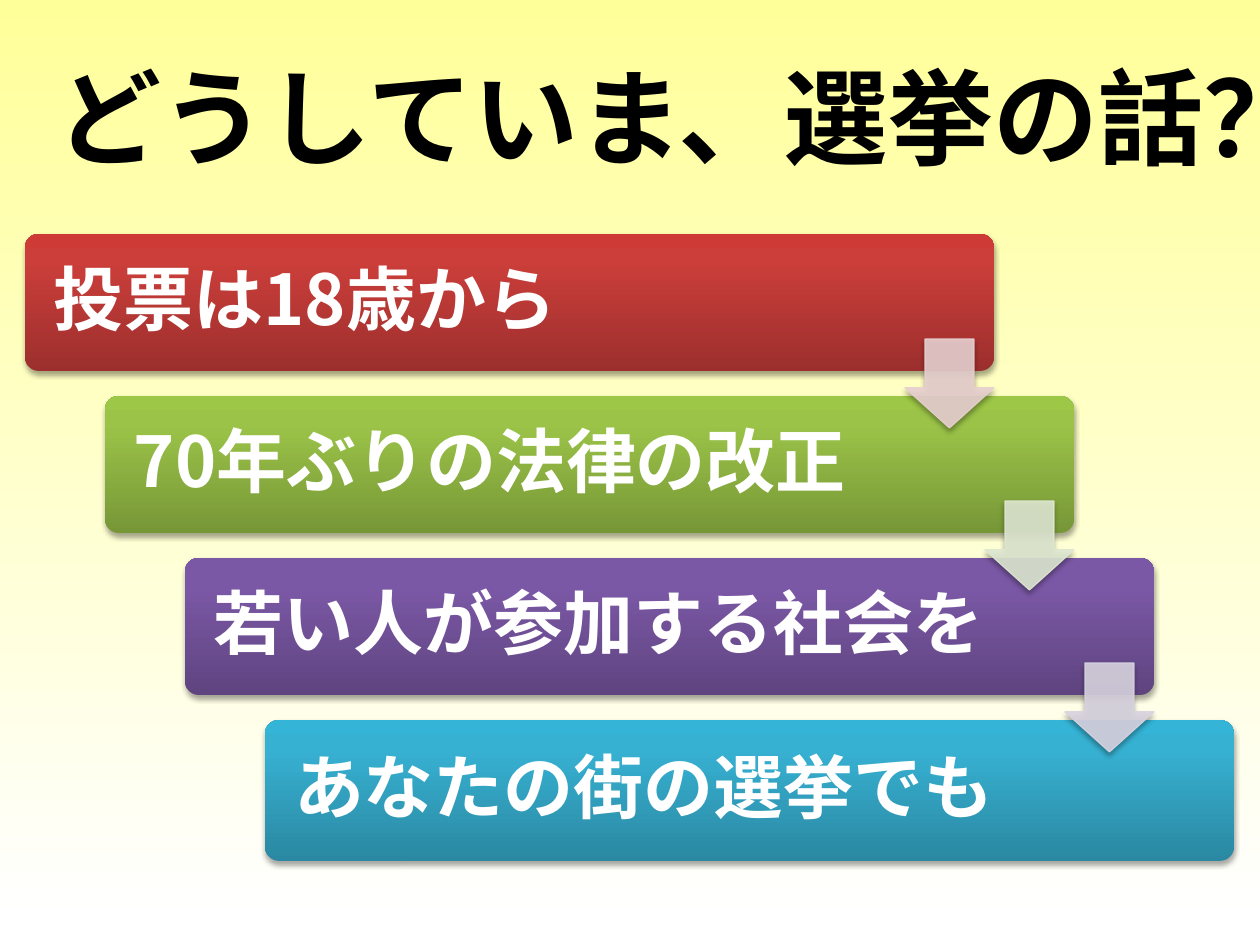
from copy import deepcopy

from lxml.etree import SubElement
from pptx import Presentation
from pptx.dml.color import RGBColor
from pptx.enum.shapes import MSO_SHAPE
from pptx.enum.text import MSO_ANCHOR, MSO_AUTO_SIZE, PP_ALIGN
from pptx.oxml.ns import qn
from pptx.util import Emu, Inches, Pt

FONT = "Noto Sans CJK JP"
# text, height, gradient colours from bottom to top, colour of the arrow below
STEPS = [
    ("投票は18歳から", 137, ("9C2F2D", "CB3E3A", "CE3B37"), "E8D0D0"),
    ("70年ぶりの法律の改正", 137, ("779737", "9BC348", "9DC746"), "DEE7D1"),
    ("若い人が参加する社会を", 137, ("5F4480", "7B58A6", "7C57A8"), "D8D3E0"),
    ("あなたの街の選挙でも", 141, ("2A88A2", "37B1D2", "34B4D6"), None),
]
BAR_W, STEP_X, STEP_Y = 969, 80, 162
ARROW, ARROW_DROP = 89, 105


def px(n):
    return Emu(round(n * 914400 / 126))


def rgb(value):
    return RGBColor.from_string(value)


def set_gradient(fill, stops, angle):
    """Angle is counter-clockwise, in degrees."""
    fill.gradient()
    last = fill.gradient_stops[-1]._gs
    for _ in stops[2:]:
        last.addnext(deepcopy(last))
    for stop, (position, color) in zip(fill.gradient_stops, stops):
        stop.position = position
        stop.color.rgb = rgb(color)
    fill.gradient_angle = angle


def set_alpha(color_element, percent):
    SubElement(color_element, qn("a:alpha")).set("val", str(percent * 1000))


def add_shadow(s):
    s.shadow.inherit = False
    effects = s._element.spPr.find(qn("a:effectLst"))
    shadow = SubElement(effects, qn("a:outerShdw"), blurRad=str(Pt(3.1)),
                        dist=str(Pt(1.8)), dir="5400000", rotWithShape="0")
    color = SubElement(shadow, qn("a:srgbClr"), val="000000")
    set_alpha(color, 35)


def format_run(r, size, color):
    r.font.size = Pt(size)
    r.font.bold = True
    r.font.name = FONT
    r.font.color.rgb = rgb(color)
    SubElement(r._r.rPr, qn("a:ea")).set("typeface", FONT)


def add_title(slide, x, y, w, h):
    s = slide.shapes.title
    s.left, s.top, s.width, s.height = px(x), px(y), px(w), px(h)
    tf = s.text_frame
    tf.text = "どうしていま、選挙の話？"
    tf.word_wrap = True
    tf.auto_size = MSO_AUTO_SIZE.NONE
    tf.vertical_anchor = MSO_ANCHOR.MIDDLE
    p = tf.paragraphs[0]
    p.alignment = PP_ALIGN.CENTER
    indent = Inches(0.56)
    p._p.get_or_add_pPr().set("marL", str(indent))
    p._p.get_or_add_pPr().set("indent", str(-indent))
    format_run(p.runs[0], 60, "000000")


def add_bar(slide, x, y, h, text, colors):
    s = slide.shapes.add_shape(MSO_SHAPE.ROUNDED_RECTANGLE, px(x), px(y), px(BAR_W), px(h))
    s.adjustments[0] = 0.1
    set_gradient(s.fill, list(zip((0, 0.8, 1), colors)), 90)
    s.line.fill.background()
    add_shadow(s)
    tf = s.text_frame
    tf.text = text
    tf.word_wrap = True
    tf.vertical_anchor = MSO_ANCHOR.MIDDLE
    tf.margin_left = tf.margin_right = tf.margin_top = tf.margin_bottom = px(25)
    p = tf.paragraphs[0]
    p.alignment = PP_ALIGN.LEFT
    p.line_spacing = 0.9
    format_run(p.runs[0], 40, "FFFFFF")


def add_arrow(slide, x, y, color):
    s = slide.shapes.add_shape(MSO_SHAPE.DOWN_ARROW, px(x), px(y), px(ARROW), px(ARROW))
    s.adjustments[0], s.adjustments[1] = 0.55, 0.45
    s.fill.solid()
    s.fill.fore_color.rgb = rgb(color)
    s.line.color.rgb = rgb(color)
    s.line.width = Pt(0.75)
    for element in s._element.spPr.iter(qn("a:srgbClr")):
        set_alpha(element, 90)
    add_shadow(s)


def add_staircase(slide, x, y):
    corners = [(x + i * STEP_X, y + i * STEP_Y) for i in range(len(STEPS))]
    for (left, top), (text, h, colors, _) in zip(corners, STEPS):
        add_bar(slide, left, top, h, text, colors)
    for (left, top), (*_, color) in zip(corners, STEPS):
        if color:
            add_arrow(slide, left + BAR_W - ARROW, top + ARROW_DROP, color)


def main():
    prs = Presentation()
    prs.slide_width, prs.slide_height = Inches(10), Inches(7.5)
    slide = prs.slides.add_slide(prs.slide_layouts[5])
    set_gradient(slide.background.fill, [(0, "FFFF99"), (0.98, "FFFFFF")], 270)
    add_title(slide, 0, 37, 1260, 158)
    add_staircase(slide, 25, 234)
    prs.save("out.pptx")


if __name__ == "__main__":
    main()
